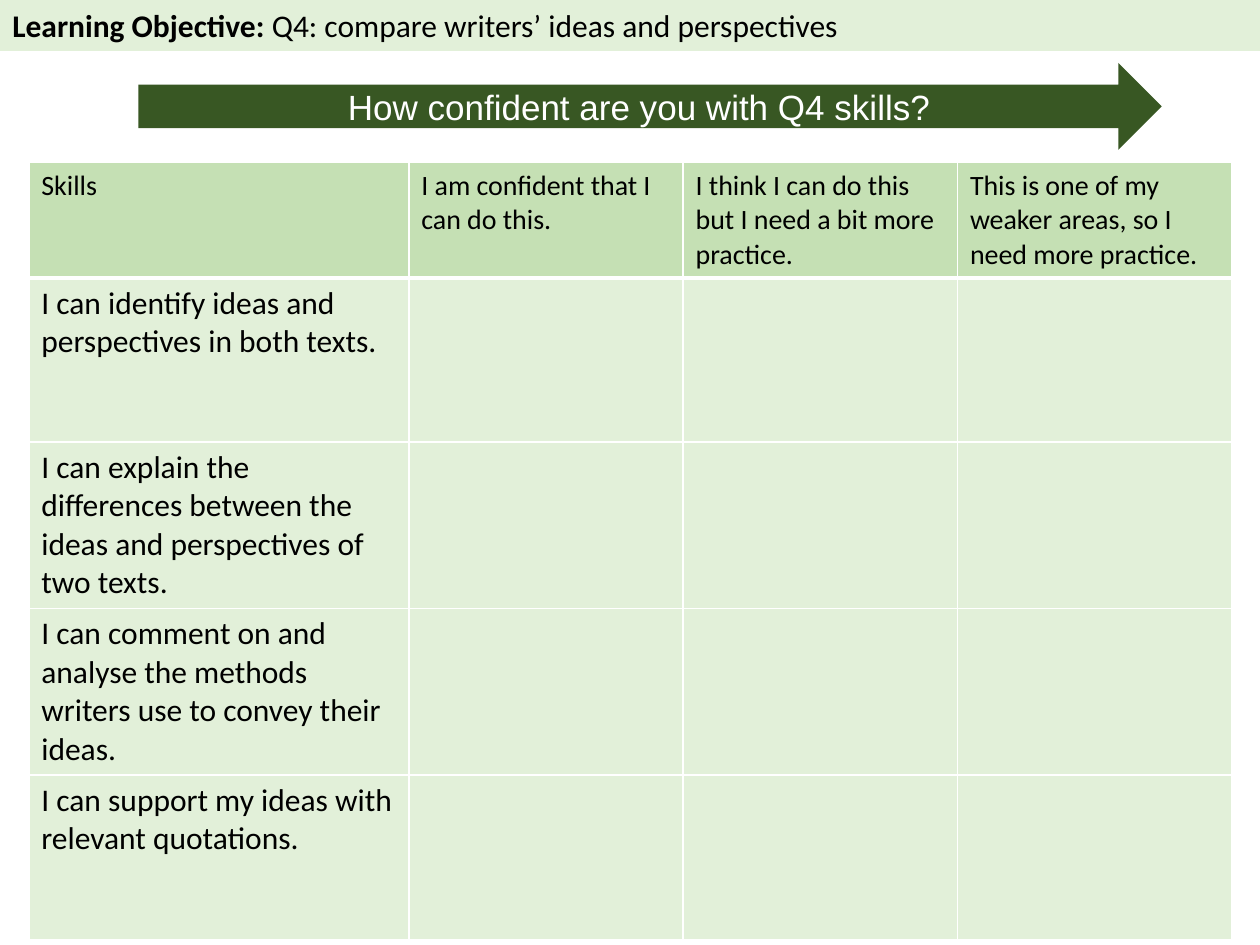
from lxml.etree import SubElement
from pptx import Presentation
from pptx.dml.color import RGBColor
from pptx.enum.shapes import MSO_SHAPE
from pptx.enum.text import MSO_ANCHOR, PP_ALIGN
from pptx.oxml.ns import qn
from pptx.util import Cm, Pt

COLORS = {
    "pale": "E2F0D9",
    "light": "C5E0B4",
    "dark": "385723",
    "white": "FFFFFF",
    "black": "000000",
}

OBJECTIVE = [
    ("Learning Objective: ", True),
    ("Q4: compare writers’ ideas and perspectives", False),
]
QUESTION = "How confident are you with Q4 skills?"
HEADINGS = [
    "Skills",
    "I am confident that I can do this.",
    "I think I can do this but I need a bit more practice.",
    "This is one of my weaker areas, so I need more practice.",
]
SKILLS = [
    "I can identify ideas and perspectives in both texts.",
    "I can explain the differences between the ideas and perspectives of two texts.",
    "I can comment on and analyse the methods writers use to convey their ideas.",
    "I can support my ideas with relevant quotations.",
]

SLIDE_WIDTH, SLIDE_HEIGHT = 25.4, 19.05
TABLE_LEFT, TABLE_TOP = 0.58, 3.28
SKILL_WIDTH, RATING_WIDTH = 7.66, 5.53
HEADING_HEIGHT, SKILL_HEIGHT = 2.27, 3.31


def color(name):
    return RGBColor.from_string(COLORS[name])


def add_run(paragraph, text, font_color="black", **format_values):
    run = paragraph.add_run()
    run.text = text
    run.font.color.rgb = color(font_color)
    for name, value in format_values.items():
        setattr(run.font, name, value)


def add_banner(slide, preset, box, fill, alignment, anchor):
    shape = slide.shapes.add_shape(preset, *map(Cm, box))
    shape.shadow.inherit = False
    shape.fill.solid()
    shape.fill.fore_color.rgb = color(fill)
    shape.line.fill.background()
    frame = shape.text_frame
    frame.word_wrap = True
    frame.vertical_anchor = anchor
    paragraph = frame.paragraphs[0]
    paragraph.alignment = alignment
    return paragraph


def style_cell(cell, fill, bottom_width):
    properties = cell._tc.get_or_add_tcPr()
    widths = {"a:lnL": 1, "a:lnR": 1, "a:lnT": 1, "a:lnB": bottom_width}
    for tag, width in widths.items():
        line = SubElement(properties, qn(tag), w=str(Pt(width)))
        solid = SubElement(line, qn("a:solidFill"))
        SubElement(solid, qn("a:srgbClr"), val=COLORS["white"])
    cell.fill.solid()
    cell.fill.fore_color.rgb = color(fill)


def add_skills_table(slide):
    rows = [HEADINGS] + [[skill, "", "", ""] for skill in SKILLS]
    widths = [SKILL_WIDTH] + [RATING_WIDTH] * (len(HEADINGS) - 1)
    heights = [HEADING_HEIGHT] + [SKILL_HEIGHT] * len(SKILLS)
    box = (TABLE_LEFT, TABLE_TOP, sum(widths), sum(heights))
    table = slide.shapes.add_table(len(rows), len(widths), *map(Cm, box)).table
    for column, width in zip(table.columns, widths):
        column.width = Cm(width)
    for row_index, (texts, height) in enumerate(zip(rows, heights)):
        table.rows[row_index].height = Cm(height)
        fill, size, bottom = ("pale", 18, 1) if row_index else ("light", 16, 3)
        for column_index, text in enumerate(texts):
            cell = table.cell(row_index, column_index)
            style_cell(cell, fill, bottom)
            if text:
                add_run(cell.text_frame.paragraphs[0], text,
                        name="Calibri", size=Pt(size), bold=False)


def main():
    presentation = Presentation()
    presentation.slide_width = Cm(SLIDE_WIDTH)
    presentation.slide_height = Cm(SLIDE_HEIGHT)
    slide = presentation.slides.add_slide(presentation.slide_layouts[6])

    objective = add_banner(slide, MSO_SHAPE.RECTANGLE, (0, 0, SLIDE_WIDTH, 1.03),
                           "pale", PP_ALIGN.LEFT, MSO_ANCHOR.TOP)
    for text, bold in OBJECTIVE:
        add_run(objective, text, name="Calibri", size=Pt(18), bold=bold)

    question = add_banner(slide, MSO_SHAPE.RIGHT_ARROW, (2.79, 1.27, 20.63, 1.75),
                          "dark", PP_ALIGN.CENTER, MSO_ANCHOR.MIDDLE)
    add_run(question, QUESTION, "white", name="Arial", size=Pt(20))

    add_skills_table(slide)
    presentation.save("out.pptx")


if __name__ == "__main__":
    main()
